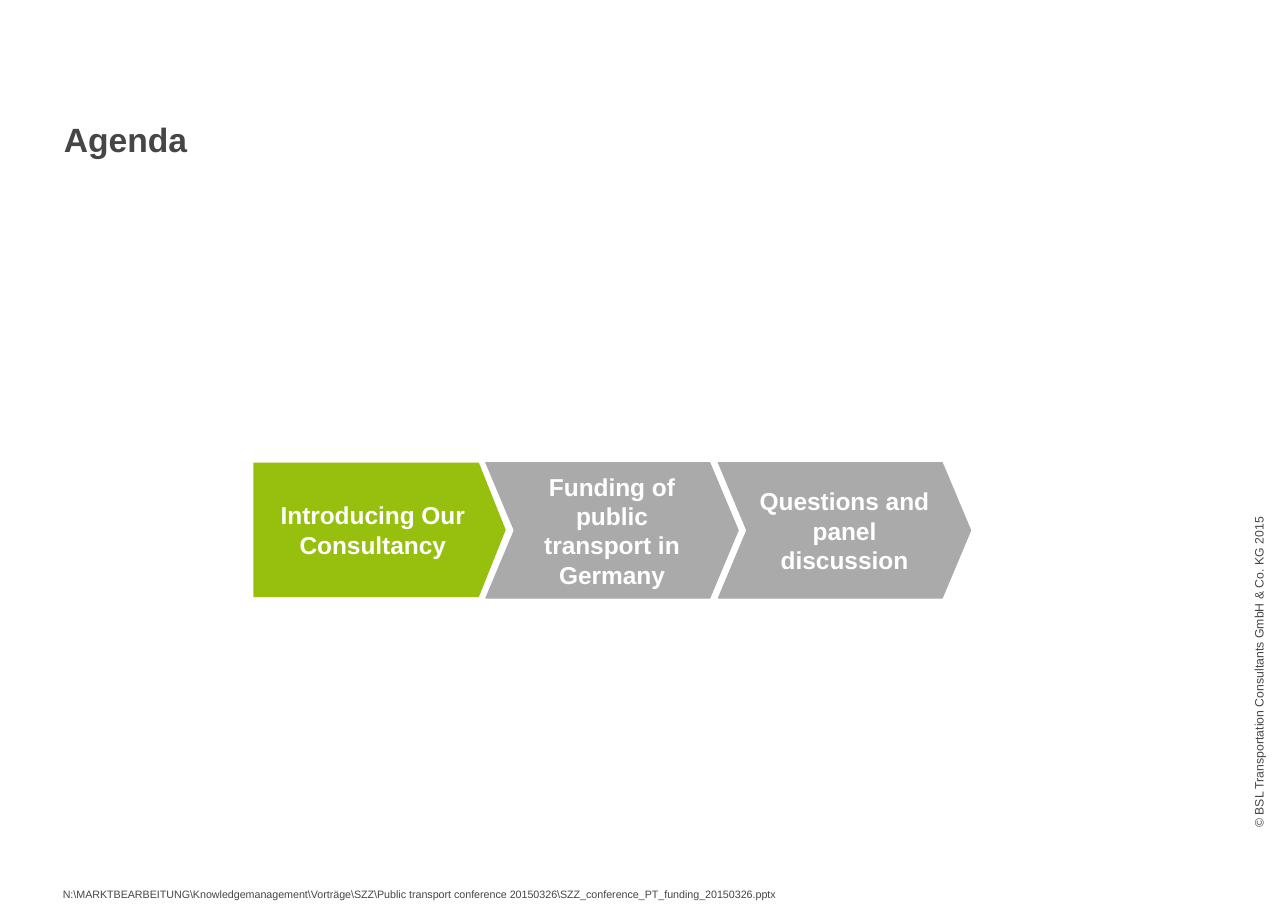
from dataclasses import dataclass

from pptx import Presentation
from pptx import util as u
from pptx.dml.color import RGBColor
from pptx.enum import shapes, text

PX = 9144  # EMU per px, 100 px to the inch


@dataclass(frozen=True)
class Theme:
    font: str = "Arial"
    ink: str = "464646"
    white: str = "FFFFFF"
    active: str = "97BF0D"
    inactive: str = "AAAAAA"
    title_size: int = 22
    step_size: int = 16
    copyright_size: int = 8
    path_size: int = 7


def write(frame, content, *, size, color, font, bold=False,
          align=text.PP_ALIGN.LEFT, anchor=text.MSO_ANCHOR.TOP,
          margins=(0, 0), wrap=True, line_spacing=None,
          auto_size=text.MSO_AUTO_SIZE.NONE):
    """Fill a text frame; margins are (horizontal, vertical) in px."""
    frame.word_wrap = wrap
    frame.auto_size = auto_size
    frame.vertical_anchor = anchor
    frame.margin_left = frame.margin_right = margins[0] * PX
    frame.margin_top = frame.margin_bottom = margins[1] * PX
    frame.text = content
    paragraph = frame.paragraphs[0]
    paragraph.alignment = align
    paragraph.line_spacing = line_spacing
    run_font = paragraph.runs[0].font
    run_font.name = font
    run_font.size = u.Pt(size)
    run_font.bold = bold
    run_font.color.rgb = RGBColor.from_string(color)


class SlideBuilder:
    def __init__(self, slide, theme):
        self.slide = slide
        self.theme = theme

    def title(self, content, left, top, width, height):
        shape = self.slide.shapes.title
        shape.left, shape.top = left * PX, top * PX
        shape.width, shape.height = width * PX, height * PX
        write(shape.text_frame, content, size=self.theme.title_size,
              color=self.theme.ink, font=self.theme.font, bold=True,
              anchor=text.MSO_ANCHOR.BOTTOM)

    def small_print(self, content, left, top, width, height, *, size,
                    margins=(0, 0), rotation=0):
        shape = self.slide.shapes.add_textbox(
            left * PX, top * PX, width * PX, height * PX)
        shape.rotation = rotation
        write(shape.text_frame, content, size=size, color=self.theme.ink,
              font=self.theme.font, margins=margins, wrap=False,
              line_spacing=1.1,
              auto_size=text.MSO_AUTO_SIZE.SHAPE_TO_FIT_TEXT)

    def step(self, content, left, top, width, height, *, kind, point,
             fill, outlined):
        """Add one arrow of the agenda; point is the depth of its tip."""
        shape = self.slide.shapes.add_shape(
            kind, left * PX, top * PX, width * PX, height * PX)
        shape.shadow.inherit = False
        shape.adjustments[0] = point
        color = RGBColor.from_string(fill)
        shape.fill.solid()
        shape.fill.fore_color.rgb = color
        if outlined:
            shape.line.color.rgb = color
            shape.line.width = u.Pt(0.75)
        else:
            shape.line.fill.background()
        write(shape.text_frame, content, size=self.theme.step_size,
              color=self.theme.white, font=self.theme.font, bold=True,
              align=text.PP_ALIGN.CENTER, anchor=text.MSO_ANCHOR.MIDDLE,
              margins=(8, 4))

    def agenda(self, topics, left, top, width, height, pitch):
        """Lay topics out as a row of arrows, the first one active."""
        for index, topic in enumerate(topics):
            place = (left + index * pitch, top, width)
            if index == 0:
                self.step(topic, *place, height - 1,
                          kind=shapes.MSO_SHAPE.PENTAGON, point=0.2,
                          fill=self.theme.active, outlined=False)
            else:
                self.step(topic, *place, height,
                          kind=shapes.MSO_SHAPE.CHEVRON, point=0.21,
                          fill=self.theme.inactive, outlined=True)


def main():
    presentation = Presentation()
    presentation.slide_width = 1169 * PX
    presentation.slide_height = 827 * PX
    title_only = presentation.slide_layouts[5]
    theme = Theme()
    builder = SlideBuilder(presentation.slides.add_slide(title_only), theme)

    builder.title("Agenda", 58, 43, 1054, 102)
    builder.small_print("© BSL Transportation Consultants GmbH & Co. KG 2015",
                        999, 601, 286, 15, size=theme.copyright_size,
                        rotation=270)
    builder.small_print(
        r"N:\MARKTBEARBEITUNG\Knowledgemanagement\Vorträge\SZZ"
        r"\Public transport conference 20150326"
        r"\SZZ_conference_PT_funding_20150326.pptx",
        57, 800, 672, 24, size=theme.path_size, margins=(0, 5))
    builder.agenda(["Introducing Our Consultancy",
                    "Funding of public transport in Germany",
                    "Questions and panel discussion"],
                   230, 420, 229, 123, pitch=211)

    presentation.save("out.pptx")


if __name__ == "__main__":
    main()
